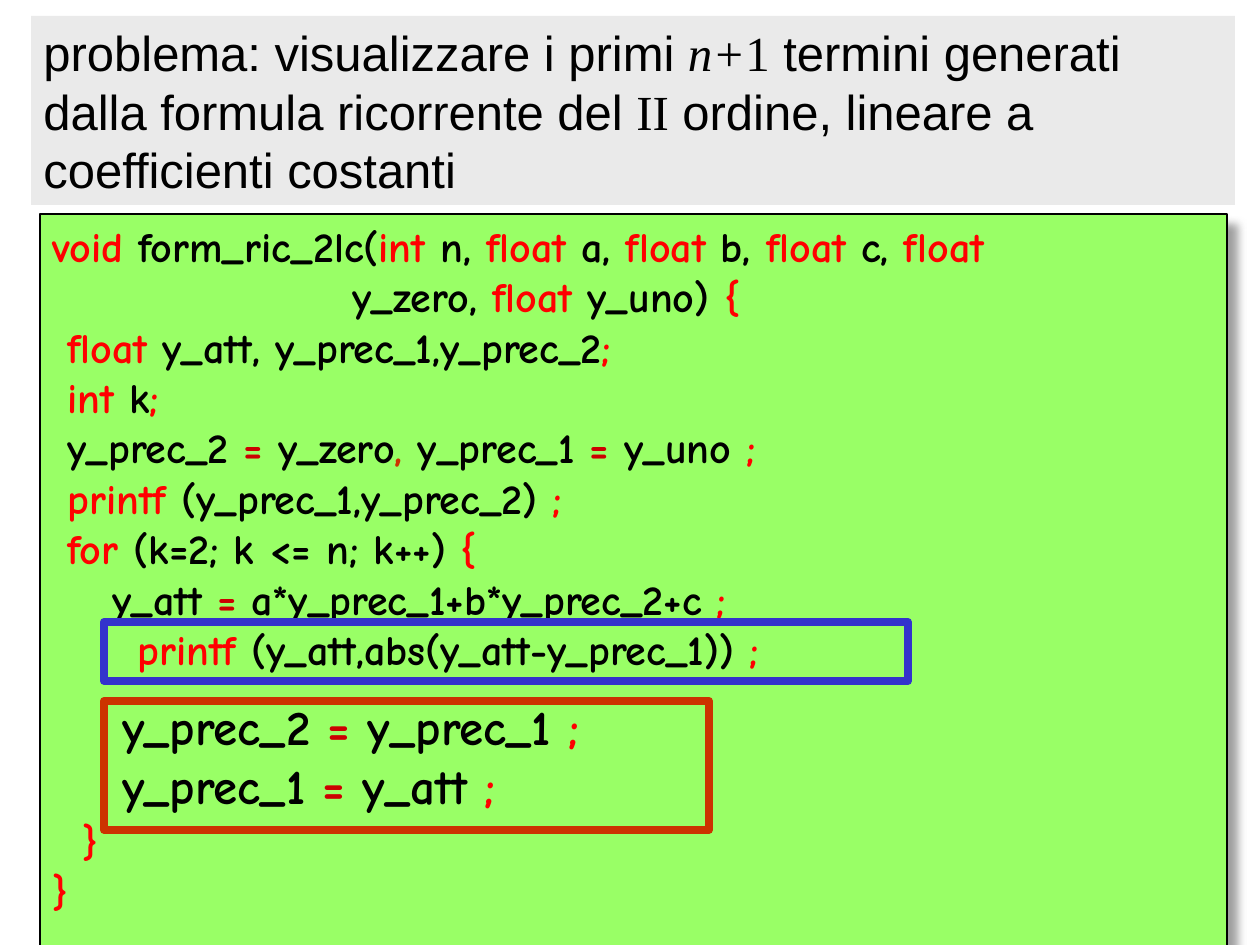
from lxml import etree
from pptx import Presentation
from pptx.dml.color import RGBColor
from pptx.enum.shapes import MSO_SHAPE
from pptx.enum.text import MSO_ANCHOR, PP_ALIGN
from pptx.oxml.ns import qn
from pptx.util import Pt

SCALE = 914400 // 126
RECTANGLE = MSO_SHAPE.RECTANGLE
TOP = MSO_ANCHOR.TOP
LEFT, JUSTIFY = PP_ALIGN.LEFT, PP_ALIGN.JUSTIFY
CODE_FONT, TITLE_FONT, MATH_FONT = "Comic Neue", "Arial", "Times New Roman"
COLORS = {
    "black": "000000", "red": "FF0000", "operator": "CC0000", "comma": "CC3300",
    "code": "99FF66", "title": "EAEAEA", "shadow": "808080",
    "update": "CC3300", "print": "3333CC",
}


class SlideBuilder:
    def __init__(self, slide):
        self.slide = slide

    def color(self, name):
        return RGBColor.from_string(COLORS[name])

    def box(self, left, top, width, height, fill=None, line=None, weight=0.75):
        shape = self.slide.shapes.add_shape(
            RECTANGLE, *(value * SCALE for value in (left, top, width, height)))
        shape.shadow.inherit = False
        if fill:
            shape.fill.solid()
            shape.fill.fore_color.rgb = self.color(fill)
        else:
            shape.fill.background()
        if line:
            shape.line.color.rgb = self.color(line)
            shape.line.width = Pt(weight)
        else:
            shape.line.fill.background()
        shape.text_frame.word_wrap = True
        shape.text_frame.vertical_anchor = TOP
        return shape

    def drop_shadow(self, shape, blur, distance, angle, opacity):
        effects = shape._element.spPr.find(qn("a:effectLst"))
        shadow = etree.SubElement(
            effects, qn("a:outerShdw"), blurRad=str(Pt(blur)), dist=str(Pt(distance)),
            dir=str(angle * 60000), algn="ctr", rotWithShape="0")
        color = etree.SubElement(shadow, qn("a:srgbClr"), val=COLORS["shadow"])
        etree.SubElement(color, qn("a:alpha"), val=str(opacity * 1000))

    def paragraph(self, paragraph, parts, size, align=LEFT, indent=0, before=0):
        """Each part is (text, color, font, bold, italic)."""
        paragraph.alignment = align
        paragraph.space_before = Pt(before)
        if indent:
            paragraph._p.get_or_add_pPr().set("marL", str(indent * SCALE))
        for text, color, font, bold, italic in parts:
            run = paragraph.add_run()
            run.text = text
            run.font.size = Pt(size)
            run.font.name = font
            run.font.bold = bold
            run.font.italic = italic
            run.font.color.rgb = self.color(color)

    def code(self, shape, lines):
        frame = shape.text_frame
        for index, (indent, size, align, before, parts) in enumerate(lines):
            paragraph = frame.add_paragraph() if index else frame.paragraphs[0]
            styled = [(text, color, CODE_FONT, True, False) for text, color in parts]
            self.paragraph(paragraph, styled, size, align, indent, before)


presentation = Presentation()
presentation.slide_width = 1260 * SCALE
presentation.slide_height = 945 * SCALE
slide = presentation.slides.add_slide(presentation.slide_layouts[6])
builder = SlideBuilder(slide)

# Code listing: indent, size, alignment, space before, coloured parts
K, R, O = "black", "red", "operator"
END = (" ;", R)
LINES = [
    (0, 24, JUSTIFY, 0, [
        ("void ", R), ("form_ric_2lc(", K), ("int ", R), ("n, ", K), ("float ", R),
        ("a,", K), (" float ", R), ("b, ", K), ("float ", R), ("c, ", K), ("float", R)]),
    (300, 24, JUSTIFY, 0, [("y_zero, ", K), ("float ", R), ("y_uno) ", K), ("{", R)]),
    (15, 24, JUSTIFY, 0, [("float ", R), ("y_att, y_prec_1,y_prec_2", K), (";", R)]),
    (15, 24, JUSTIFY, 0, [("int ", R), ("k", K), (";", R)]),
    (15, 24, JUSTIFY, 0, [
        ("y_prec_2 ", K), ("= ", O), ("y_zero", K), (", ", "comma"),
        ("y_prec_1 ", K), ("= ", O), ("y_uno", K), END]),
    (15, 24, JUSTIFY, 0, [("printf ", R), ("(y_prec_1,y_prec_2)", K), END]),
    (15, 24, JUSTIFY, 0, [("for ", R), ("(k=2; k <= n; k++) ", K), ("{", R)]),
    (60, 24, JUSTIFY, 0, [
        ("y_att ", K), ("= ", O), ("a*y_prec_1+b*y_prec_2+c", K), END]),
    (85, 24, LEFT, 0, [("printf ", R), ("(y_att,abs(y_att-y_prec_1))", K), END]),
    (70, 28, LEFT, 13, [("y_prec_2 ", K), ("= ", O), ("y_prec_1", K), END]),
    (70, 28, LEFT, 0, [("y_prec_1 ", K), ("= ", O), ("y_att", K), END]),
    (30, 24, LEFT, 0, [("}", R)]),
    (0, 24, LEFT, 0, [("}", R)]),
]
listing = builder.box(40, 214, 1187, 742, "code", "black")
builder.drop_shadow(listing, 5, 8.5, 45, 75)
builder.code(listing, LINES)

# Frames around the update and print statements
builder.box(104, 701, 605, 129, line="update", weight=4.5)
builder.box(104, 622, 804, 59, line="print", weight=4.5)

# Problem statement
title = builder.box(31, 16, 1204, 189, "title")
builder.paragraph(title.text_frame.paragraphs[0], [
    ("problema: visualizzare i primi ", K, TITLE_FONT, False, False),
    ("n+", K, MATH_FONT, False, True),
    ("1", K, MATH_FONT, False, False),
    (" termini generati dalla formula ricorrente del ", K, TITLE_FONT, False, False),
    ("II", K, MATH_FONT, False, False),
    (" ordine, lineare a coefficienti costanti", K, TITLE_FONT, False, False),
], 28)

presentation.save("out.pptx")
